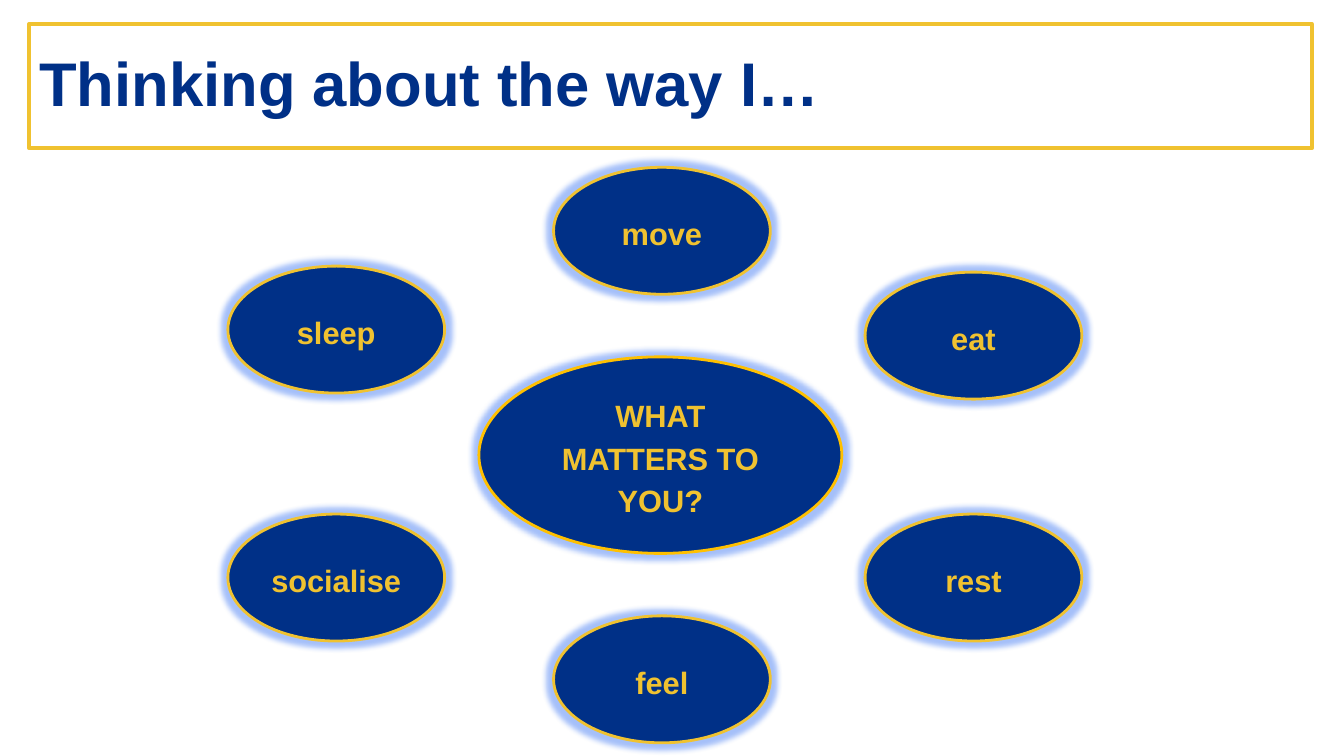
"""Build a slide of six daily habits around one central question."""
from lxml.etree import SubElement
from pptx import Presentation
from pptx.dml.color import RGBColor
from pptx.enum.shapes import MSO_SHAPE
from pptx.enum.text import MSO_ANCHOR, MSO_AUTO_SIZE, PP_ALIGN
from pptx.oxml.ns import qn
from pptx.util import Pt

PX = 9144
NAVY = RGBColor(0x00, 0x30, 0x87)
GOLD = RGBColor(0xF0, 0xC2, 0x30)
AMBER = RGBColor(0xFF, 0xC0, 0x00)
GLOW = RGBColor(0x1E, 0x61, 0xF2)


def style(item, values):
    for name, value in values.items():
        setattr(item, name, value)


def place(shape, box):
    sides = ("left", "top", "width", "height")
    style(shape, {side: size * PX for side, size in zip(sides, box)})


deck = Presentation()
style(deck, {"slide_width": 1333 * PX, "slide_height": 750 * PX})
slide = deck.slides.add_slide(deck.slide_layouts[5])

title = slide.shapes.title
place(title, (29, 24, 1272, 123))
title.line.color.rgb = GOLD
title.line.width = Pt(3)
frame = title.text_frame
frame.text = "Thinking about the way I…"
style(frame, {"vertical_anchor": MSO_ANCHOR.MIDDLE, "word_wrap": True,
              "auto_size": MSO_AUTO_SIZE.NONE})
head = frame.paragraphs[0]
style(head, {"alignment": PP_ALIGN.LEFT, "line_spacing": 0.9})
style(head.font, {"name": "Arial", "size": Pt(44), "bold": True})
head.font.color.rgb = NAVY

LEFT, MID, RIGHT = 226, 549, 858
SMALL = (215, 126)
ovals = [
    ("WHAT MATTERS TO YOU?", 475, 354, (360, 195), AMBER),
    ("sleep", LEFT, 264, SMALL, GOLD),
    ("move", MID, 166, SMALL, GOLD),
    ("eat", RIGHT, 270, SMALL, GOLD),
    ("rest", RIGHT, 510, SMALL, GOLD),
    ("feel", MID, 611, SMALL, GOLD),
    ("socialise", LEFT, 510, SMALL, GOLD),
]
for words, left, top, size, edge in ovals:
    oval = slide.shapes.add_shape(MSO_SHAPE.OVAL, 0, 0, PX, PX)
    place(oval, (left, top, *size))
    oval.fill.solid()
    oval.fill.fore_color.rgb = NAVY
    oval.line.color.rgb = edge
    oval.line.width = Pt(2)

    oval.shadow.inherit = False
    effects = oval.element.spPr.find(qn("a:effectLst"))
    glow = SubElement(effects, qn("a:glow"), rad=str(Pt(8)))
    tint = SubElement(glow, qn("a:srgbClr"), val=str(GLOW))
    SubElement(tint, qn("a:alpha"), val="40000")

    frame = oval.text_frame
    frame.text = words
    style(frame, {"vertical_anchor": MSO_ANCHOR.MIDDLE, "word_wrap": True})
    label = frame.paragraphs[0]
    style(label, {"alignment": PP_ALIGN.CENTER, "line_spacing": 1.15,
                  "space_after": Pt(10)})
    style(label.font, {"name": "Arial", "size": Pt(22), "bold": True})
    label.font.color.rgb = GOLD

deck.save("out.pptx")
